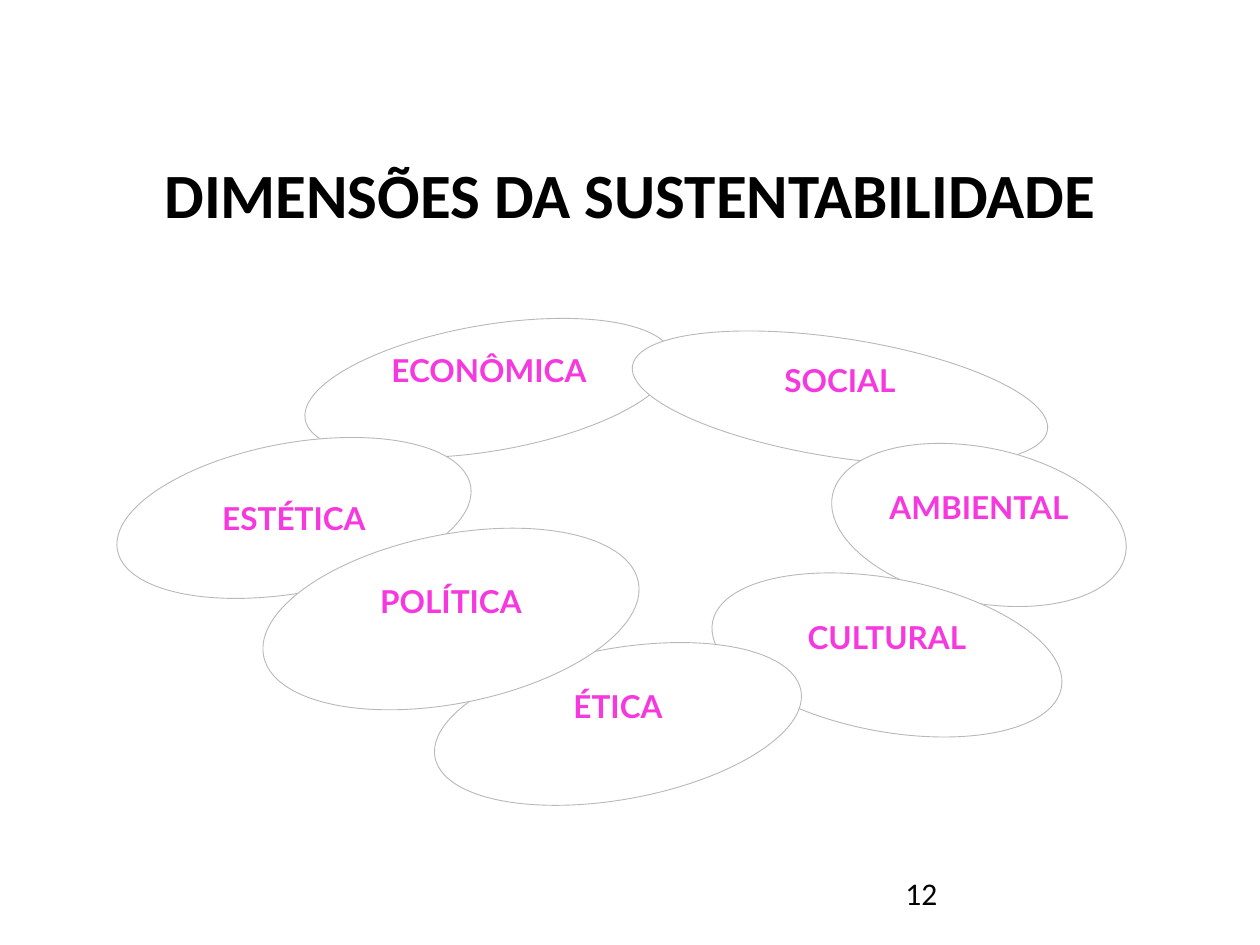
from pptx import Presentation
from pptx.dml.color import RGBColor
from pptx.enum.shapes import MSO_SHAPE as Shape
from pptx.enum.text import MSO_ANCHOR as Anchor, PP_ALIGN as Align
from pptx.util import Pt

PX = 914400 // 126
BLACK = RGBColor(0x00, 0x00, 0x00)
WHITE = RGBColor(0xFF, 0xFF, 0xFF)
GREY = RGBColor(0xB8, 0xB8, 0xB8)
MAGENTA = RGBColor(0xF6, 0x38, 0xDF)

LABEL_WIDTH, LABEL_HEIGHT = 280, 46
RAISED = -18

DIMENSIONS = [
    ("ECONÔMICA", 489, 388, 373, 126, -9.7, RAISED),
    ("SOCIAL", 840, 398, 420, 119, 8.8, RAISED),
    ("AMBIENTAL", 979, 525, 299, 155, 11.5, RAISED),
    ("CULTURAL", 887, 655, 355, 153, 10.7, RAISED),
    ("ÉTICA", 618, 724, 372, 151, -10.3, RAISED),
    ("ESTÉTICA", 294, 518, 359, 150, -10.3, 0),
    ("POLÍTICA", 451, 619, 382, 169, -11.2, RAISED),
]


def box(left, top, width, height):
    return [int(length * PX) for length in (left, top, width, height)]


def add_text(slide, text, bounds, size=18, font="Calibri", color=BLACK,
             bold=False, align=Align.LEFT, anchor=Anchor.TOP):
    frame = slide.shapes.add_textbox(*box(*bounds)).text_frame
    frame.word_wrap = True
    frame.vertical_anchor = anchor
    paragraph = frame.paragraphs[0]
    paragraph.alignment = align
    run = paragraph.add_run()
    run.text = text
    run.font.size = Pt(size)
    run.font.name = font
    run.font.bold = bold
    run.font.color.rgb = color


def add_petal(slide, center_x, center_y, width, height, tilt):
    petal = slide.shapes.add_shape(
        Shape.OVAL,
        *box(center_x - width / 2, center_y - height / 2, width, height))
    petal.rotation = tilt
    petal.shadow.inherit = False
    petal.fill.solid()
    petal.fill.fore_color.rgb = WHITE
    petal.line.color.rgb = GREY
    petal.line.width = Pt(0.5)


def add_dimension(slide, name, center_x, center_y, width, height, tilt, shift):
    add_petal(slide, center_x, center_y, width, height, tilt)
    label_bounds = (center_x - LABEL_WIDTH / 2,
                    center_y + shift - LABEL_HEIGHT / 2,
                    LABEL_WIDTH, LABEL_HEIGHT)
    add_text(slide, name, label_bounds, font="Lato", color=MAGENTA, bold=True,
             align=Align.CENTER, anchor=Anchor.MIDDLE)


def main():
    deck = Presentation()
    deck.slide_width, deck.slide_height = 1260 * PX, 945 * PX
    slide = deck.slides.add_slide(deck.slide_layouts[6])
    add_text(slide, "DIMENSÕES DA SUSTENTABILIDADE", (59, 149, 1142, 186),
             size=36, bold=True, align=Align.CENTER)
    add_text(slide, "12", (893, 868, 74, 49))
    for dimension in DIMENSIONS:
        add_dimension(slide, *dimension)
    deck.save("out.pptx")


if __name__ == "__main__":
    main()
